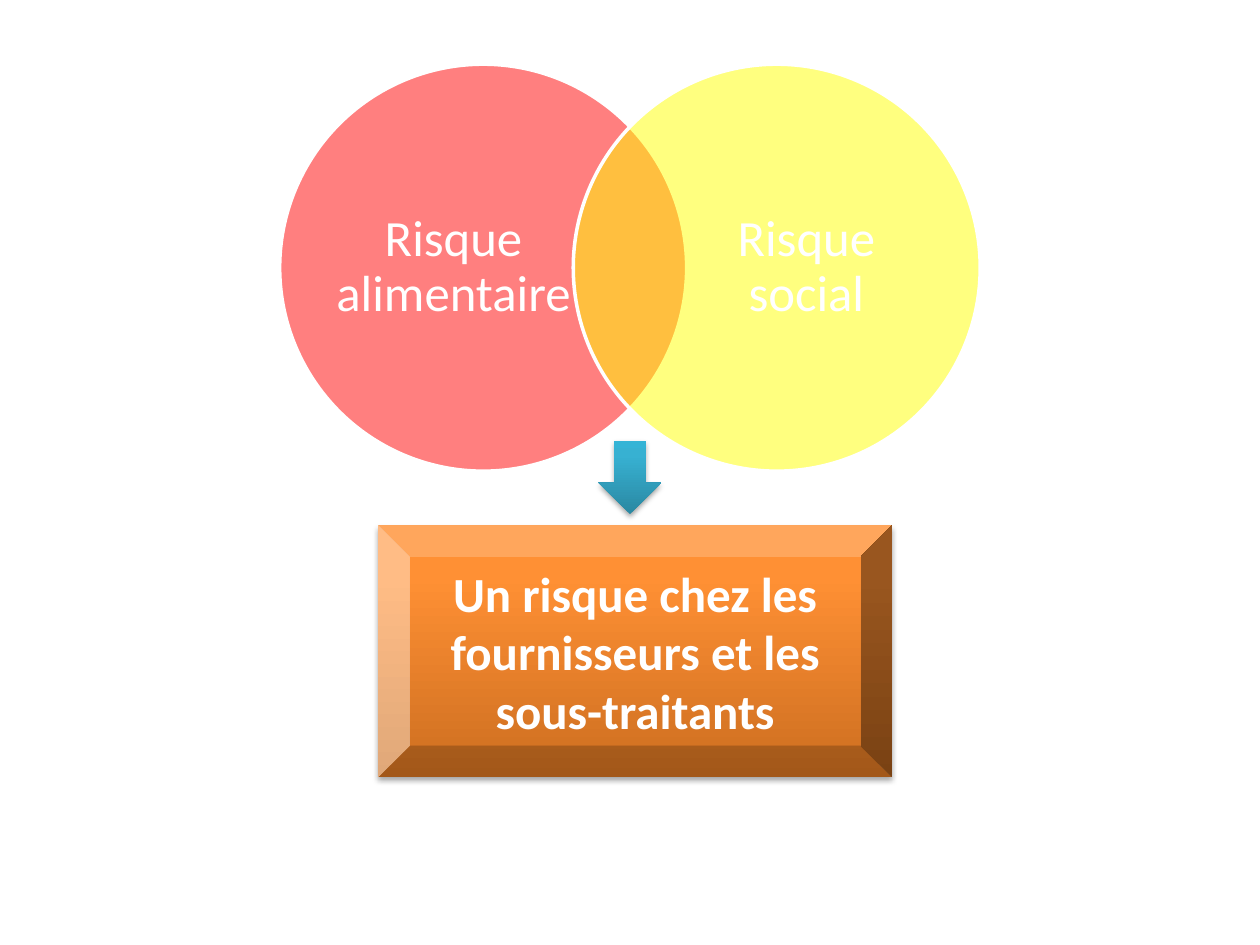
"""Build the slide where food risk and social risk meet in a supplier risk."""
from lxml.etree import SubElement
from pptx import Presentation
from pptx.dml.color import RGBColor
from pptx.enum.shapes import MSO_SHAPE as Shape
from pptx.enum.text import MSO_ANCHOR as Anchor, PP_ALIGN as Align
from pptx.oxml.ns import qn
from pptx.util import Inches, Pt

THEME = {
    "font": "Calibri", "white": "FFFFFF", "label_size": 29, "result_size": 28,
    "food": "FF0000", "social": "FFFF00", "shadow": "000000",
    "arrow": ((0, "2A88A2"), (80, "37B1D2"), (100, "34B4D6")),
    "result": ((0, "CC6E20"), (80, "FF9034"), (100, "FF9136")),
}
WIDTH, HEIGHT = 10, 7.5
DIAMETER, CIRCLE_LEFT, CIRCLE_TOP = 3.23, 2.22, 0.51
LABEL_WIDTH, LABEL_HEIGHT, LABEL_LEFT = 1.92, 2.47, 2.64
LABEL_TOP = CIRCLE_TOP + (DIAMETER - LABEL_HEIGHT) / 2


def write(shape, text, size, bold, spacing, margin_x, margin_y):
    frame = shape.text_frame
    paragraph = frame.paragraphs[0]
    paragraph.text = text
    formats = {
        frame: {"word_wrap": True, "vertical_anchor": Anchor.MIDDLE,
                "margin_left": margin_x, "margin_right": margin_x,
                "margin_top": margin_y, "margin_bottom": margin_y},
        paragraph: {"alignment": Align.CENTER, "line_spacing": spacing},
        paragraph.runs[0].font: {"name": THEME["font"], "size": Pt(size), "bold": bold},
    }
    for target, values in formats.items():
        for name, value in values.items():
            setattr(target, name, value)
    paragraph.runs[0].font.color.rgb = RGBColor.from_string(THEME["white"])


def add_color(parent, color, alpha=100):
    element = SubElement(parent, qn("a:srgbClr"), val=color)
    SubElement(element, qn("a:alpha"), val=str(alpha * 1000))


presentation = Presentation()
presentation.slide_width, presentation.slide_height = Inches(WIDTH), Inches(HEIGHT)
slide = presentation.slides.add_slide(presentation.slide_layouts[6])

circles = (
    ("Risque alimentaire", "food", CIRCLE_LEFT, LABEL_LEFT),
    ("Risque social", "social", WIDTH - CIRCLE_LEFT - DIAMETER,
     WIDTH - LABEL_LEFT - LABEL_WIDTH),
)
for text, color, circle_left, label_left in circles:
    circle = slide.shapes.add_shape(Shape.OVAL, *map(
        Inches, (circle_left, CIRCLE_TOP, DIAMETER, DIAMETER)))
    circle.shadow.inherit = False
    circle.fill.solid()
    circle.fill.fore_color.rgb = RGBColor.from_string(THEME[color])
    fill_color = circle.element.spPr.find(qn("a:solidFill"))[0]
    SubElement(fill_color, qn("a:alpha"), val="50000")
    circle.line.color.rgb = RGBColor.from_string(THEME["white"])
    circle.line.width = Pt(2)
    label = slide.shapes.add_textbox(*map(
        Inches, (label_left, LABEL_TOP, LABEL_WIDTH, LABEL_HEIGHT)))
    write(label, text, THEME["label_size"], False, 0.9, 0, 0)

blocks = (
    ("arrow", Shape.DOWN_ARROW, (4.75, 3.5, 0.5, 0.58), ""),
    ("result", Shape.BEVEL, (3, 4.17, 4.08, 2),
     "Un risque chez les fournisseurs et les sous-traitants"),
)
for name, kind, box, text in blocks:
    shape = slide.shapes.add_shape(kind, *map(Inches, box))
    shape.line.fill.background()
    shape.fill.gradient()
    shape.fill.gradient_angle = 90
    properties = shape.element.spPr
    stops = properties.find(qn("a:gradFill")).find(qn("a:gsLst"))
    for stop in list(stops):
        stops.remove(stop)
    for position, color in THEME[name]:
        add_color(SubElement(stops, qn("a:gs"), pos=str(position * 1000)), color)
    shape.shadow.inherit = False
    shadow = SubElement(
        properties.find(qn("a:effectLst")), qn("a:outerShdw"), blurRad=str(Pt(3.1)),
        dist=str(Pt(1.8)), dir="5400000", rotWithShape="0")
    add_color(shadow, THEME["shadow"], 35)
    if text:
        write(shape, text, THEME["result_size"], True, 1.0, Inches(0.1), Inches(0.05))

presentation.save("out.pptx")
